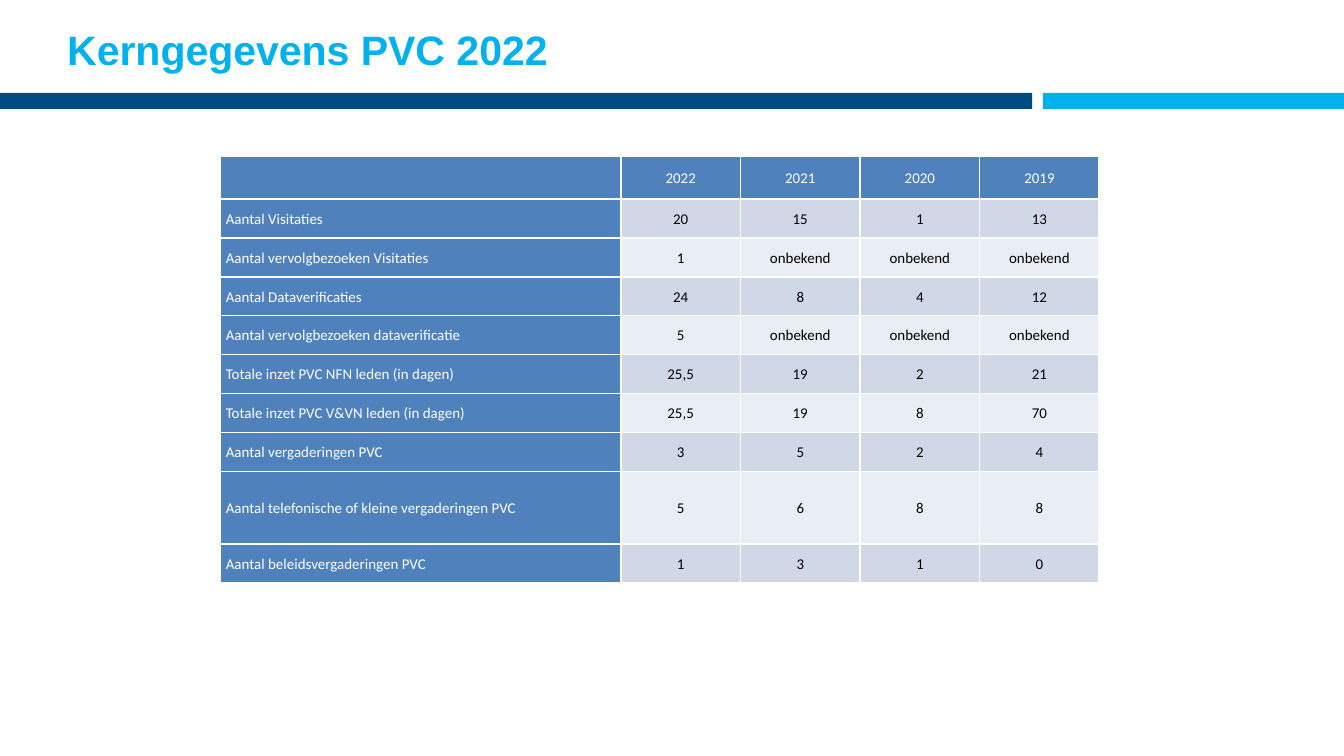
from typing import NamedTuple

from lxml.etree import SubElement
from pptx import Presentation
from pptx.dml.color import RGBColor
from pptx.enum.shapes import MSO_SHAPE
from pptx.enum.text import MSO_ANCHOR, PP_ALIGN
from pptx.oxml.ns import qn
from pptx.util import Inches, Pt

CYAN, NAVY, BLUE = "01B1EC", "004C82", "4F81BD"
WHITE, BLACK = "FFFFFF", "000000"
BANDS = ("D0D8E8", "E9EDF4")

SLIDE_WIDTH = 10
SLIDE_HEIGHT = SLIDE_WIDTH * 9 / 16
YEARS = ("2022", "2021", "2020", "2019")
COLUMN_WIDTHS = (2.98, *[0.89] * len(YEARS))


class Bar(NamedTuple):
    left: float
    width: float
    color: str


class Row(NamedTuple):
    label: str
    values: tuple[str, ...]
    height: float = 0.29


BARS = (Bar(7.76, 2.24, CYAN), Bar(0, 7.68, NAVY))
UNKNOWN = ("onbekend",) * 3
ROWS = (
    Row("", YEARS, 0.32),
    Row("Aantal Visitaties", ("20", "15", "1", "13")),
    Row("Aantal vervolgbezoeken Visitaties", ("1", *UNKNOWN)),
    Row("Aantal Dataverificaties", ("24", "8", "4", "12")),
    Row("Aantal vervolgbezoeken dataverificatie", ("5", *UNKNOWN)),
    Row("Totale inzet PVC NFN leden (in dagen)", ("25,5", "19", "2", "21")),
    Row("Totale inzet PVC V&VN leden (in dagen)", ("25,5", "19", "8", "70")),
    Row("Aantal vergaderingen PVC", ("3", "5", "2", "4")),
    Row("Aantal telefonische of kleine vergaderingen PVC", ("5", "6", "8", "8"), 0.54),
    Row("Aantal beleidsvergaderingen PVC", ("1", "3", "1", "0")),
)


def rgb(color: str) -> RGBColor:
    return RGBColor.from_string(color)


def set_attributes(target, values: dict) -> None:
    for name, value in values.items():
        setattr(target, name, value)


def format_font(font, name: str, size: float, color: str, bold: bool = False) -> None:
    set_attributes(font, {"name": name, "size": Pt(size), "bold": bold})
    font.color.rgb = rgb(color)


def add_title(s, text: str) -> None:
    title = s.shapes.title
    set_attributes(title, {"left": Inches(0.5), "top": Inches(0.15),
                           "width": Inches(7.18), "height": Inches(0.46)})
    tf = title.text_frame
    set_attributes(tf, {"margin_left": 0, "margin_top": Inches(0.05),
                        "margin_right": 0, "margin_bottom": Inches(0.08),
                        "vertical_anchor": MSO_ANCHOR.MIDDLE, "word_wrap": True})
    p = tf.paragraphs[0]
    p.alignment = PP_ALIGN.LEFT
    r = p.add_run()
    r.text = text
    format_font(r.font, "Arial", 22, CYAN, bold=True)


def add_bar(s, bar: Bar) -> None:
    sp = s.shapes.add_shape(MSO_SHAPE.RECTANGLE, Inches(bar.left), Inches(0.69),
                            Inches(bar.width), Inches(0.12))
    sp.shadow.inherit = False
    sp.fill.solid()
    sp.fill.fore_color.rgb = rgb(bar.color)
    sp.line.fill.background()


def add_borders(cell) -> None:
    """Draw white cell borders; must run before the cell fill is set."""
    tc_pr = cell._tc.get_or_add_tcPr()
    for side in "LRTB":
        line = SubElement(tc_pr, qn(f"a:ln{side}"), w=str(Pt(1)))
        fill = SubElement(line, qn("a:solidFill"))
        SubElement(fill, qn("a:srgbClr"), val=WHITE)


def format_cell(cell, text: str, row: int, col: int) -> None:
    is_heading = row == 0 or col == 0
    add_borders(cell)
    cell.fill.solid()
    cell.fill.fore_color.rgb = rgb(BLUE if is_heading else BANDS[(row - 1) % 2])
    set_attributes(cell, {"margin_left": Inches(0.04), "margin_right": Inches(0.04),
                          "margin_top": 0, "margin_bottom": 0,
                          "vertical_anchor": MSO_ANCHOR.MIDDLE})
    cell.text = text
    p = cell.text_frame.paragraphs[0]
    set_attributes(p, {"alignment": PP_ALIGN.CENTER if col else PP_ALIGN.LEFT,
                       "line_spacing": 1.07})
    for r in p.runs:
        format_font(r.font, "Calibri", 8, WHITE if is_heading else BLACK)


def add_key_figures(s, rows: tuple[Row, ...]) -> None:
    frame = s.shapes.add_table(len(rows), len(COLUMN_WIDTHS), Inches(1.64), Inches(1.16),
                               Inches(sum(COLUMN_WIDTHS)),
                               Inches(sum(row.height for row in rows)))
    table = frame.table
    for column, width in zip(table.columns, COLUMN_WIDTHS):
        column.width = Inches(width)
    for i, row in enumerate(rows):
        table.rows[i].height = Inches(row.height)
        for j, text in enumerate((row.label, *row.values)):
            format_cell(table.cell(i, j), text, i, j)


def main() -> None:
    prs = Presentation()
    set_attributes(prs, {"slide_width": Inches(SLIDE_WIDTH),
                         "slide_height": Inches(SLIDE_HEIGHT)})
    s = prs.slides.add_slide(prs.slide_layouts[5])
    for bar in BARS:
        add_bar(s, bar)
    add_key_figures(s, ROWS)
    add_title(s, "Kerngegevens PVC 2022")
    prs.save("out.pptx")


if __name__ == "__main__":
    main()
